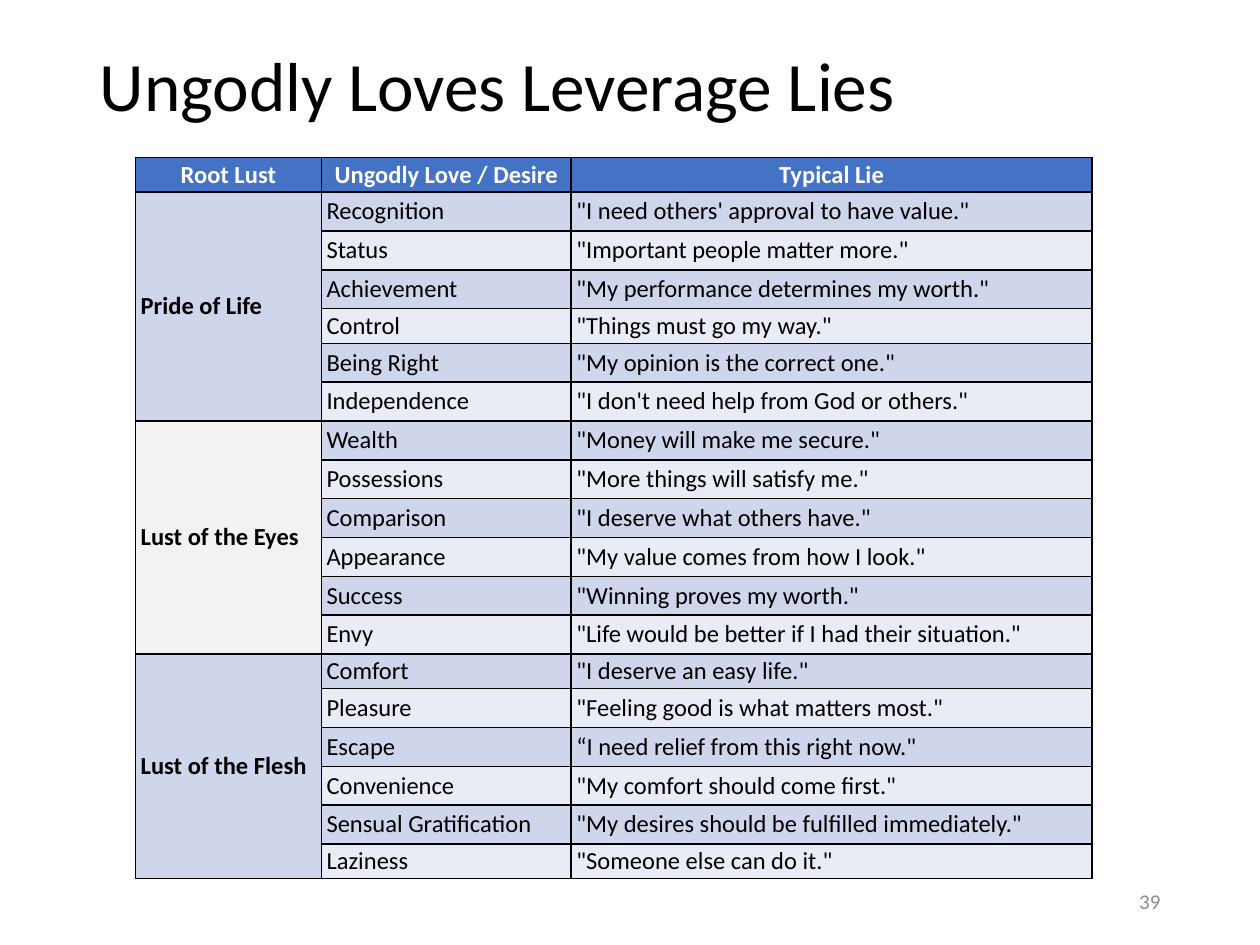
"""Build the slide that matches root lusts with ungodly desires and typical lies."""
from typing import Any, NamedTuple

from lxml.etree import SubElement
from pptx import Presentation
from pptx.dml.color import RGBColor
from pptx.enum.text import MSO_ANCHOR as Anchor, MSO_AUTO_SIZE as AutoSize, PP_ALIGN as Align
from pptx.oxml.ns import qn
from pptx.util import Pt

PX = 7620
FONT = "Calibri"
COLORS = {
    "ink": "000000",
    "paper": "FFFFFF",
    "number": "8C8C8C",
    "header": "4472C4",
    "odd": "CFD5EA",
    "even": "E9EBF5",
    "gray": "F2F2F2",
}
COLUMN_WIDTHS = (177, 238, 496)
TALL_ROW, SHORT_ROW = 37, 33
SHORT_DESIRES = {"Control", "Comfort", "Laziness"}
HEADINGS = ("Root Lust", "Ungodly Love / Desire", "Typical Lie")


class Lie(NamedTuple):
    desire: str
    quote: str


class Lust(NamedTuple):
    name: str
    fill: str
    lies: tuple[Lie, ...]


class TextStyle(NamedTuple):
    size: float
    color: str = "ink"
    bold: bool = False
    align: Align = Align.LEFT


BODY = TextStyle(14)
ROOT = TextStyle(14, bold=True)
HEADER = TextStyle(14, "paper", True, Align.CENTER)

LUSTS = (
    Lust("Pride of Life", "odd", (
        Lie("Recognition", '"I need others\' approval to have value."'),
        Lie("Status", '"Important people matter more."'),
        Lie("Achievement", '"My performance determines my worth."'),
        Lie("Control", '"Things must go my way."'),
        Lie("Being Right", '"My opinion is the correct one."'),
        Lie("Independence", '"I don\'t need help from God or others."'),
    )),
    Lust("Lust of the Eyes", "gray", (
        Lie("Wealth", '"Money will make me secure."'),
        Lie("Possessions", '"More things will satisfy me."'),
        Lie("Comparison", '"I deserve what others have."'),
        Lie("Appearance", '"My value comes from how I look."'),
        Lie("Success", '"Winning proves my worth."'),
        Lie("Envy", '"Life would be better if I had their situation."'),
    )),
    Lust("Lust of the Flesh", "odd", (
        Lie("Comfort", '"I deserve an easy life."'),
        Lie("Pleasure", '"Feeling good is what matters most."'),
        Lie("Escape", '“I need relief from this right now."'),
        Lie("Convenience", '"My comfort should come first."'),
        Lie("Sensual Gratification", '"My desires should be fulfilled immediately."'),
        Lie("Laziness", '"Someone else can do it."'),
    )),
)


def rgb(name: str) -> RGBColor:
    """Look up a named colour."""
    return RGBColor.from_string(COLORS[name])


def apply(target: Any, values: dict[str, Any]) -> None:
    """Set each attribute named in values."""
    for name, value in values.items():
        setattr(target, name, value)


def write(frame: Any, text: str, style: TextStyle) -> Any:
    """Write one styled paragraph and return it."""
    para = frame.paragraphs[0]
    para.alignment = style.align
    span = para.add_run()
    span.text = text
    apply(span.font, {"name": FONT, "size": Pt(style.size), "bold": style.bold})
    span.font.color.rgb = rgb(style.color)
    return para


def place(shape: Any, left: int, top: int, width: int, height: int) -> None:
    """Position a text shape and anchor its text in the middle."""
    apply(shape, {"left": left * PX, "top": top * PX, "width": width * PX, "height": height * PX})
    apply(shape.text_frame, {
        "word_wrap": True, "auto_size": AutoSize.NONE, "vertical_anchor": Anchor.MIDDLE,
    })


def add_borders(cell: Any) -> None:
    """Outline all four sides of a cell."""
    properties = cell._tc.get_or_add_tcPr()
    for side in ("lnL", "lnR", "lnT", "lnB"):
        line = SubElement(properties, qn(f"a:{side}"), w=str(Pt(1)))
        fill = SubElement(line, qn("a:solidFill"))
        SubElement(fill, qn("a:srgbClr"), val=COLORS["ink"])


def fill_cell(cell: Any, text: str, fill: str, style: TextStyle) -> None:
    """Write and colour a table cell."""
    write(cell.text_frame, text, style)
    cell.fill.solid()
    cell.fill.fore_color.rgb = rgb(fill)


def add_lies_table(slide: Any) -> None:
    """Draw the table of lusts, desires and lies."""
    desires = [lie.desire for lust in LUSTS for lie in lust.lies]
    heights = [SHORT_ROW] + [SHORT_ROW if name in SHORT_DESIRES else TALL_ROW for name in desires]
    table = slide.shapes.add_table(
        len(heights), len(COLUMN_WIDTHS), 129 * PX, 150 * PX,
        sum(COLUMN_WIDTHS) * PX, sum(heights) * PX,
    ).table
    for column, width in zip(table.columns, COLUMN_WIDTHS):
        column.width = width * PX
    for row, height in zip(table.rows, heights):
        row.height = height * PX
    for cell in table.iter_cells():
        apply(cell, {
            "margin_left": 5 * PX, "margin_right": 5 * PX,
            "margin_top": 2 * PX, "margin_bottom": 2 * PX,
            "vertical_anchor": Anchor.MIDDLE,
        })
        add_borders(cell)
    for column, heading in enumerate(HEADINGS):
        fill_cell(table.cell(0, column), heading, "header", HEADER)
    row = 1
    for lust in LUSTS:
        root = table.cell(row, 0)
        root.merge(table.cell(row + len(lust.lies) - 1, 0))
        fill_cell(root, lust.name, lust.fill, ROOT)
        for lie in lust.lies:
            band = "odd" if row % 2 else "even"
            for column, text in enumerate(lie, start=1):
                fill_cell(table.cell(row, column), text, band, BODY)
            row += 1


def main() -> None:
    """Create and save the deck."""
    deck = Presentation()
    apply(deck, {"slide_width": 1200 * PX, "slide_height": 900 * PX})
    page = deck.slides.add_slide(deck.slide_layouts[5])
    title = page.shapes.title
    place(title, 83, 48, 1034, 74)
    write(title.text_frame, "Ungodly Loves Leverage Lies", TextStyle(39.6)).line_spacing = 0.9
    number = page.shapes.add_textbox(0, 0, 0, 0)
    place(number, 847, 834, 270, 48)
    write(number.text_frame, "39", TextStyle(12, "number", align=Align.RIGHT))
    add_lies_table(page)
    deck.save("out.pptx")


if __name__ == "__main__":
    main()
